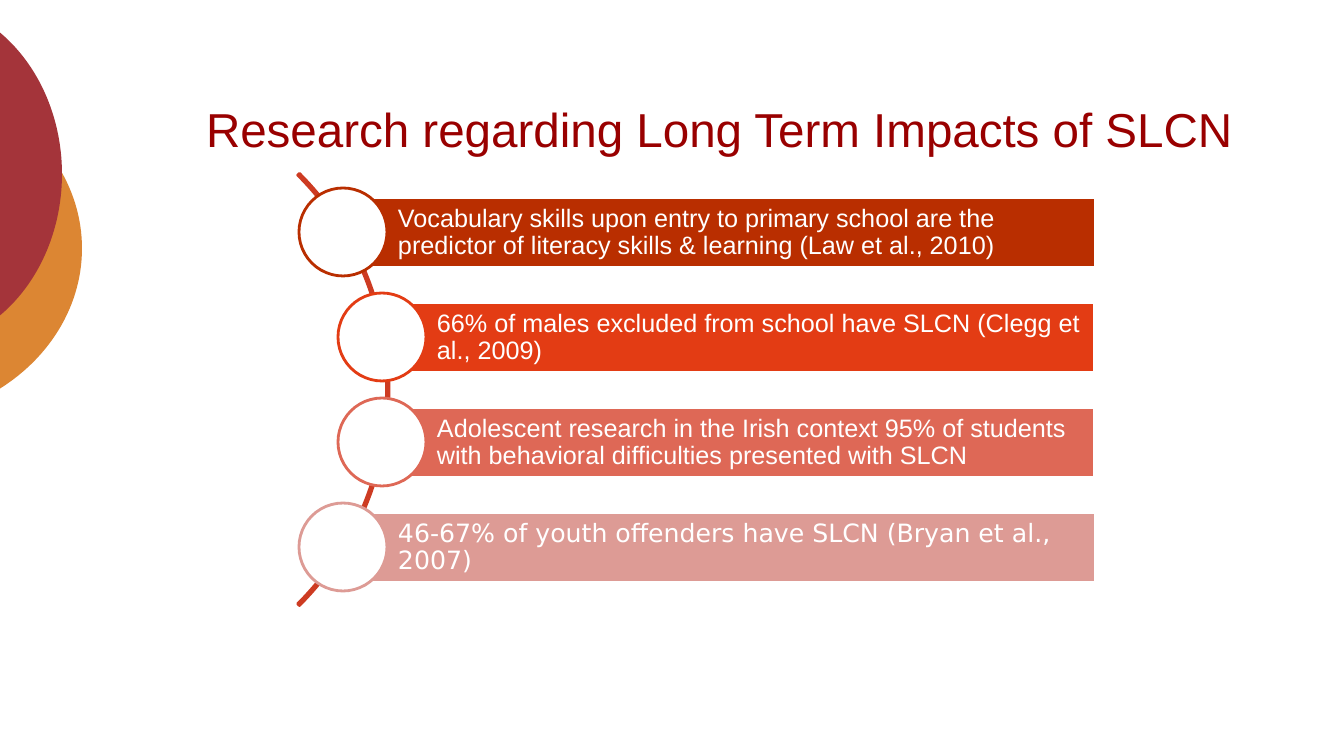
"""Build a slide on the long term impacts of SLCN."""
from dataclasses import dataclass

from pptx import Presentation
from pptx.dml.color import RGBColor as Rgb
from pptx.enum.shapes import MSO_SHAPE as Kind
from pptx.enum.text import MSO_ANCHOR as Anchor, MSO_AUTO_SIZE as Fit, PP_ALIGN as Align
from pptx.shapes.autoshape import Shape
from pptx.slide import Slide
from pptx.util import Emu, Pt

SCALE = 914400 / 100.8
WHITE = Rgb(0xFF, 0xFF, 0xFF)
GOLD = Rgb(0xDC, 0x86, 0x33)
MAROON = Rgb(0xA4, 0x34, 0x3A)
WINE = Rgb(0x99, 0x00, 0x00)
RED = Rgb(0xCD, 0x3B, 0x22)
RUST = Rgb(0xB9, 0x2E, 0x00)
FLAME = Rgb(0xE3, 0x3C, 0x14)
CORAL = Rgb(0xDE, 0x68, 0x56)
ROSE = Rgb(0xDD, 0x9B, 0x95)

TOP, STEP, RIGHT, HIGH = 198, 105, 1095, 69
DISC = 88


@dataclass(frozen=True)
class Box:
    left: int
    top: int
    width: int
    height: int


@dataclass(frozen=True)
class Point:
    text: str
    left: int
    color: Rgb
    font: str = "Arial"


POINTS = (
    Point("Vocabulary skills upon entry to primary school are the predictor of "
          "literacy skills & learning (Law et al., 2010)", 343, RUST),
    Point("66% of males excluded from school have SLCN (Clegg et al., 2009)", 382, FLAME),
    Point("Adolescent research in the Irish context 95% of students with "
          "behavioral difficulties presented with SLCN", 382, CORAL),
    Point("46-67% of youth offenders have SLCN (Bryan et al., 2007)", 343, ROSE,
          "DejaVu Sans"),
)


def px(count: int) -> Emu:
    return Emu(round(count * SCALE))


def place(shape: Shape, box: Box) -> None:
    shape.left, shape.top = px(box.left), px(box.top)
    shape.width, shape.height = px(box.width), px(box.height)


def draw(slide: Slide, kind: Kind, box: Box, fill: Rgb | None = None,
         line: Rgb | None = None) -> Shape:
    shape = slide.shapes.add_shape(kind, 0, 0, 0, 0)
    place(shape, box)
    shape.shadow.inherit = False
    if fill is None:
        shape.fill.background()
    else:
        shape.fill.solid()
        shape.fill.fore_color.rgb = fill
    if line is None:
        shape.line.fill.background()
    else:
        shape.line.color.rgb = line
        shape.line.width = Pt(2)
    return shape


def write(shape: Shape, text: str, *, size: int, color: Rgb, font: str = "Arial",
          anchor: Anchor = Anchor.MIDDLE, inset: int = 10, pad: int = 5,
          space: float = 1.0) -> None:
    frame = shape.text_frame
    frame.text = text
    frame.word_wrap = True
    frame.auto_size = Fit.NONE
    frame.vertical_anchor = anchor
    frame.margin_left = px(inset)
    frame.margin_top = frame.margin_right = frame.margin_bottom = px(pad)
    line = frame.paragraphs[0]
    line.alignment = Align.LEFT
    line.line_spacing = space
    style = line.runs[0].font
    style.name, style.size, style.color.rgb = font, Pt(size), color


def add_row(slide: Slide, point: Point, top: int) -> None:
    bar = draw(slide, Kind.RECTANGLE, Box(point.left, top, RIGHT - point.left, HIGH),
               point.color, WHITE)
    write(bar, point.text, size=18, color=WHITE, font=point.font, inset=55, space=0.9)
    draw(slide, Kind.OVAL, Box(point.left - DISC // 2, top + (HIGH - DISC) // 2, DISC, DISC),
         WHITE, point.color)


def main() -> None:
    deck = Presentation()
    deck.slide_width, deck.slide_height = px(1344), px(756)
    slide = deck.slides.add_slide(deck.slide_layouts[5])
    draw(slide, Kind.OVAL, Box(-312, 76, 394, 345), GOLD)
    draw(slide, Kind.OVAL, Box(-235, 0, 297, 348), MAROON)
    title = slide.shapes.title
    place(title, Box(196, 36, 1080, 126))
    write(title, "Research regarding Long Term Impacts of SLCN", size=34, color=WINE,
          anchor=Anchor.BOTTOM)
    arc = draw(slide, Kind.BLOCK_ARC, Box(-222, 84, 611, 611), line=RED)
    for index, value in enumerate((189, 27, 0.004)):
        arc.adjustments[index] = value
    for index, point in enumerate(POINTS):
        add_row(slide, point, TOP + index * STEP)
    deck.save("out.pptx")


if __name__ == "__main__":
    main()
